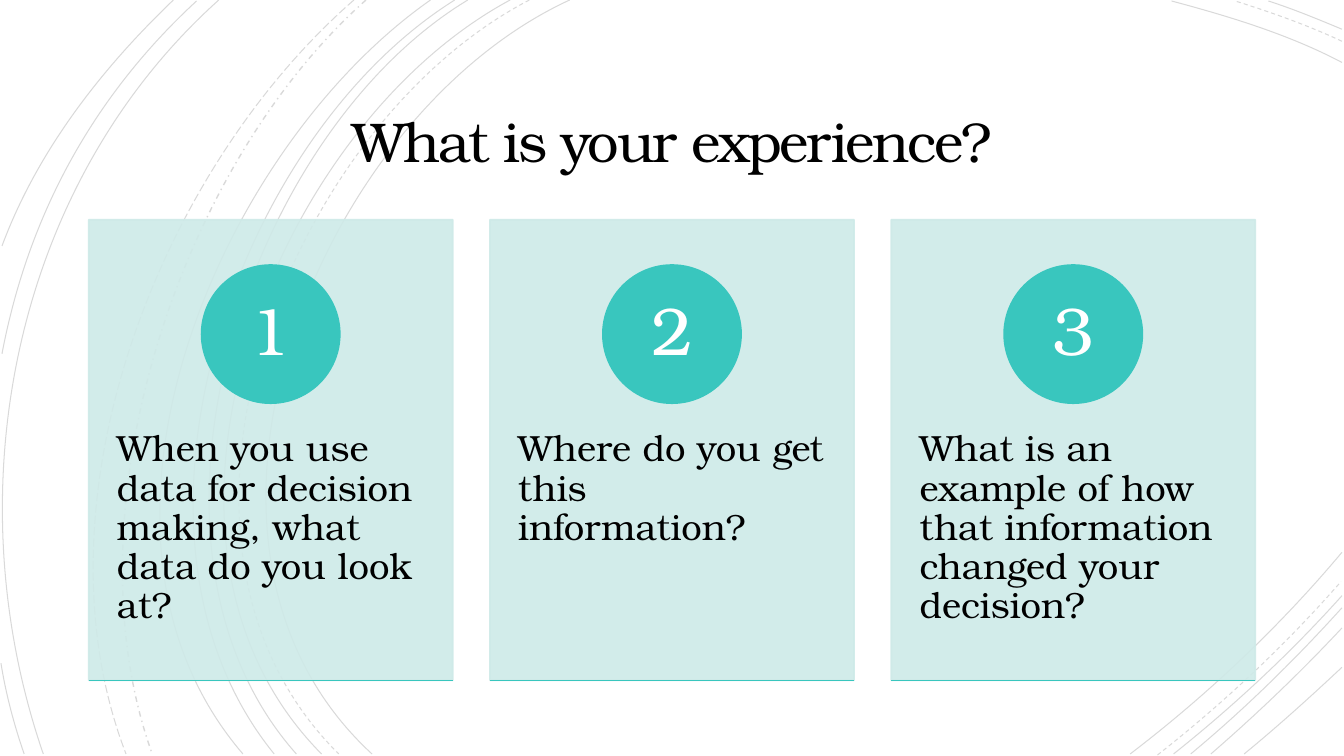
from lxml.etree import SubElement
from pptx import Presentation
from pptx.dml.color import RGBColor
from pptx.enum.dml import MSO_LINE
from pptx.enum.shapes import MSO_CONNECTOR, MSO_SHAPE
from pptx.enum.text import MSO_ANCHOR, PP_ALIGN
from pptx.oxml.ns import qn
from pptx.util import Inches, Pt

# Grid: one cell is one inch square
COLS, ROWS = 13.33, 7.5
FONT = "TeX Gyre Bonum"
HUES = {"ink": "000000", "card": "CEEAE8", "teal": "39C6BE", "white": "FFFFFF"}

# Cards: left edge, step, top and size in cells
LEFT, STEP, TOP, WIDE, HIGH = 0.88, 3.98, 2.18, 3.61, 4.57
DISC, INSET = 1.37, 0.2
ASKS = [
    "When you use data for decision making, what data do you look at?",
    "Where do you get this information?",
    "What is an example of how that information changed your decision?",
]

# Arcs: start, two control points and end, as column and row pairs
SOLID = [
    [(5.65, 0), (3.15, 1.15), (1.43, 5.4), (3.69, 7.48)],
    [(13.31, 0.62), (12.78, 0.34), (12.18, 0.16), (11.62, 0.01)],
    [(11.21, 7.48), (11.97, 6.9), (12.69, 6.22), (13.31, 5.48)],
    [(5.06, 0), (2.7, 1.27), (1.1, 5.37), (3.19, 7.48)],
    [(13.31, 0.29), (13.07, 0.19), (12.83, 0.09), (12.58, 0.01)],
    [(11.64, 7.48), (12.23, 7.01), (12.8, 6.48), (13.31, 5.91)],
    [(4.64, 0), (2.44, 1.33), (1.1, 5.41), (2.94, 7.48)],
    [(11.81, 7.48), (12.34, 7.04), (12.84, 6.55), (13.31, 6.03)],
    [(4.51, 0), (2.31, 1.38), (0.97, 5.33), (2.72, 7.48)],
    [(12.01, 7.48), (12.46, 7.09), (12.9, 6.67), (13.31, 6.23)],
    [(4.27, 0), (2.17, 1.47), (0.53, 5.29), (2.41, 7.48)],
    [(12.34, 7.48), (12.67, 7.21), (12.99, 6.92), (13.31, 6.62)],
    [(2.17, 0), (0.11, 1.85), (-0.46, 4.9), (0.43, 7.48)],
    [(1.95, 0.01), (0.92, 0.96), (0.28, 2.14), (0.02, 3.51)],
    [(0.01, 6.58), (0.06, 6.89), (0.14, 7.19), (0.24, 7.48)],
    [(1.72, 0), (1, 0.69), (0.37, 1.5), (0.02, 2.44)],
]
DASHED = [
    [(5.25, 0), (2.85, 1.25), (1.23, 5.37), (3.36, 7.48)],
    [(13.31, 0.41), (12.97, 0.25), (12.6, 0.12), (12.25, 0.01)],
    [(11.48, 7.49), (12.13, 6.98), (12.75, 6.4), (13.3, 5.77)],
]
DOTTED = [[(3.63, 0), (1.76, 1.66), (0.65, 5.09), (1.51, 7.48)]]
LONG = [[(3.51, 0), (1.57, 1.69), (0.29, 4.99), (1.25, 7.48)]]


def cells(*spans):
    return [Inches(span) for span in spans]


def hue(name):
    return RGBColor.from_string(HUES[name])


def stroke(line, name, width):
    line.color.rgb = hue(name)
    line.width = Pt(width)


def fade(shape, share):
    for tint in shape.element.iter(qn("a:srgbClr")):
        SubElement(tint, qn("a:alpha")).set("val", str(share * 1000))


def add_arc(group, points, dash, width=0.75):
    start, *rest = [cells(*point) for point in points]
    pen = group.shapes.build_freeform(*start)
    pen.add_line_segments(rest, close=False)
    arc = pen.convert_to_shape()
    # Turn the three segments into one cubic curve
    legs = list(arc.element.iter(qn("a:lnTo")))
    track = legs[0].getparent()
    curve = SubElement(track, qn("a:cubicBezTo"))
    for leg in legs:
        curve.append(leg[0])
        track.remove(leg)
    arc.shadow.inherit = False
    arc.fill.background()
    stroke(arc.line, "ink", width)
    arc.line.dash_style = dash
    fade(arc, 15)


def add_block(group, kind, box, name):
    block = group.shapes.add_shape(kind, *cells(*box))
    block.shadow.inherit = False
    block.fill.solid()
    block.fill.fore_color.rgb = hue(name)
    stroke(block.line, name, 1.25)
    return block


def add_rule(group, left, top, wide):
    rule = group.shapes.add_connector(
        MSO_CONNECTOR.STRAIGHT, *cells(left, top, left + wide, top))
    stroke(rule.line, "teal", 1.25)
    SubElement(rule.element.spPr, qn("a:effectLst"))


def add_text(owner, box, text, size, name, pads, lead, after=0,
             align=PP_ALIGN.LEFT, anchor=MSO_ANCHOR.TOP):
    frame = owner.shapes.add_textbox(*cells(*box)).text_frame
    frame.word_wrap = True
    frame.vertical_anchor = anchor
    frame.margin_left = frame.margin_right = Inches(pads[0])
    frame.margin_top = frame.margin_bottom = Inches(pads[1])
    para = frame.paragraphs[0]
    para.alignment = align
    para.line_spacing = lead
    para.space_after = Pt(size * after)
    run = para.add_run()
    run.text = text
    run.font.name = FONT
    run.font.size = Pt(size)
    run.font.color.rgb = hue(name)
    return run


def add_card(slide, index, ask):
    group = slide.shapes.add_group_shape()
    left = LEFT + index * STEP
    panel = add_block(group, MSO_SHAPE.RECTANGLE, (left, TOP, WIDE, HIGH), "card")
    fade(panel, 90)
    add_text(group, (left, 3.91, WIDE, 2.74), ask, 26, "ink",
             (0.28, 0.36), 0.9, 0.35)
    # Numbered disc, centred on the card
    side, top = left + (WIDE - DISC) / 2, TOP + 0.45
    add_block(group, MSO_SHAPE.OVAL, (side, top, DISC, DISC), "teal")
    inner = DISC - 2 * INSET
    add_text(group, (side + INSET, top + INSET, inner, inner), str(index + 1),
             48, "white", (0.11, 0.01), 0.9, 0.35,
             PP_ALIGN.CENTER, MSO_ANCHOR.MIDDLE)
    add_rule(group, left, TOP + HIGH, WIDE)


def main():
    deck = Presentation()
    deck.slide_width, deck.slide_height = cells(COLS, ROWS)
    slide = deck.slides.add_slide(deck.slide_layouts[6])
    slide.background.fill.solid()
    slide.background.fill.fore_color.rgb = hue("white")

    # Backdrop of faint arcs
    arcs = slide.shapes.add_group_shape()
    for curves, dash, width in (
        (SOLID, MSO_LINE.SOLID, 0.75),
        (DASHED, MSO_LINE.DASH, 0.75),
        (DOTTED, MSO_LINE.DASH_DOT, 1),
        (LONG, MSO_LINE.LONG_DASH, 0.75),
    ):
        for points in curves:
            add_arc(arcs, points, dash, width)

    # Title
    title = add_text(slide, (1.92, 0.87, 9.49, 1.15), "What is your experience?",
                     40, "ink", (0.25, 0.25), 0.85,
                     align=PP_ALIGN.CENTER, anchor=MSO_ANCHOR.MIDDLE)
    title.font.element.set("spc", "-150") if hasattr(title.font, "element") \
        else title.text and title._r.get_or_add_rPr().set("spc", "-150")

    # Question cards
    for index, ask in enumerate(ASKS):
        add_card(slide, index, ask)

    deck.save("out.pptx")


if __name__ == "__main__":
    main()
